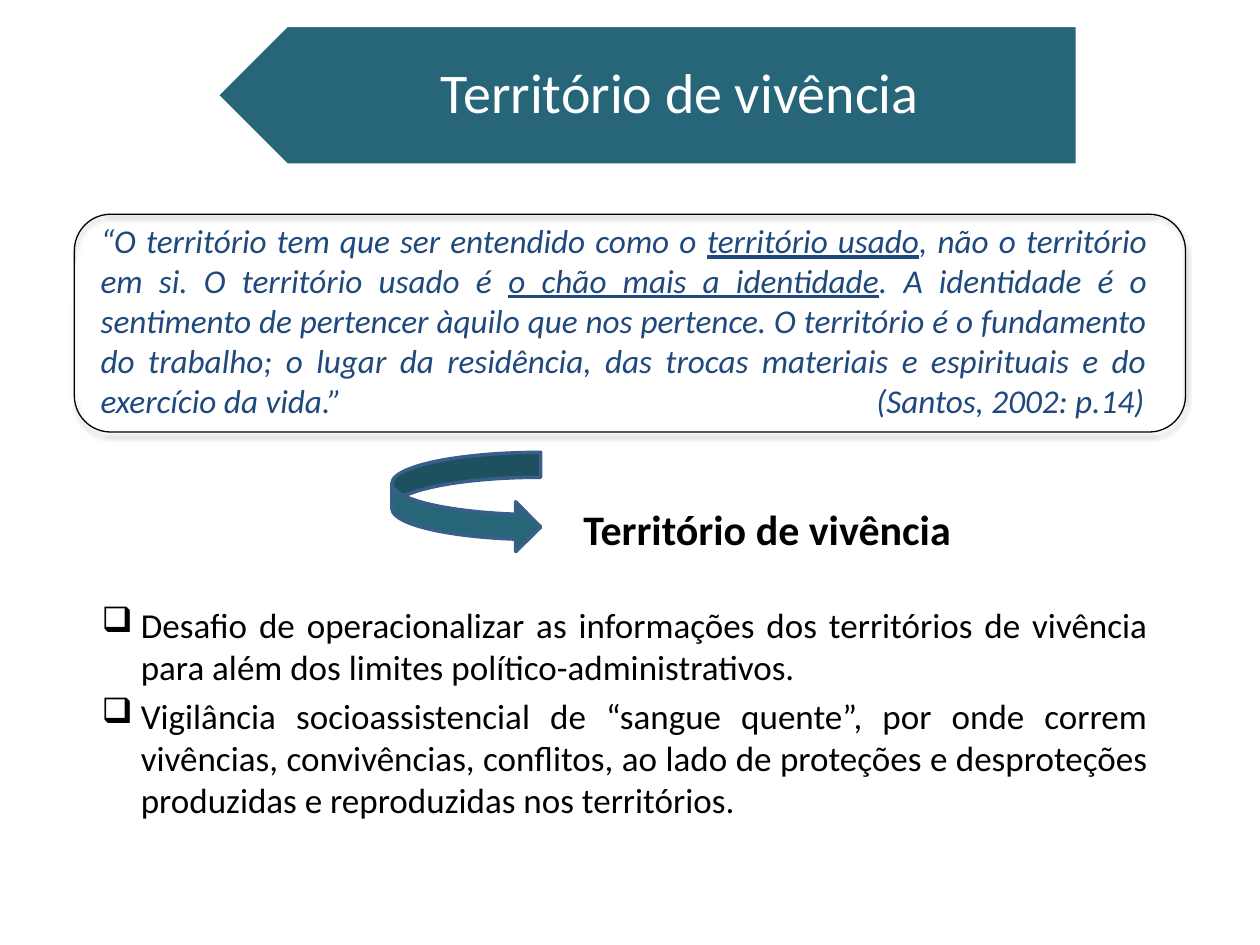
"""Builds the slide on the lived territory, "Território de vivência"."""
from lxml.etree import SubElement
from pptx import Presentation
from pptx.dml.color import RGBColor
from pptx.enum.shapes import MSO_SHAPE
from pptx.enum.text import MSO_ANCHOR, MSO_AUTO_SIZE, PP_ALIGN
from pptx.oxml import parse_xml
from pptx.oxml.ns import nsdecls, qn
from pptx.util import Cm, Pt

TEAL, NAVY, BLACK, WHITE = "266678", "1F497D", "000000", "FFFFFF"
COLUMN = Cm(21.59)


def color(code):
    return RGBColor.from_string(code)


def write(paragraph, text, size=20, ink=BLACK, bold=False, italic=False, underline=False):
    run = paragraph.add_run()
    run.text = text
    font = run.font
    font.name, font.size, font.color.rgb = "Calibri", Pt(size), color(ink)
    font.bold, font.italic, font.underline = bold, italic, underline


deck = Presentation()
deck.slide_width, deck.slide_height = Cm(25.4), Cm(19.05)
slide = deck.slides.add_slide(deck.slide_layouts[5])
shapes = slide.shapes

banner = shapes.add_shape(MSO_SHAPE.PENTAGON, Cm(4.37), Cm(0.51), Cm(17.35), Cm(2.82))
turn = shapes.add_shape(MSO_SHAPE.CURVED_RIGHT_ARROW, Cm(7.9), Cm(9.12), Cm(3), Cm(2.01))
for arrow, edge in ((banner, WHITE), (turn, "395E89")):
    arrow.shadow.inherit = False
    arrow.fill.solid()
    arrow.fill.fore_color.rgb = color(TEAL)
    arrow.line.color.rgb = color(edge)
    arrow.line.width = Pt(2)
banner.rotation = 180

title = shapes.title
title.element.addprevious(banner.element)
title.left, title.top, title.width, title.height = Cm(5.08), Cm(0.51), Cm(16.66), Cm(2.82)
heading = title.text_frame
heading.auto_size = MSO_AUTO_SIZE.NONE
heading.vertical_anchor = MSO_ANCHOR.MIDDLE
heading.margin_left, heading.margin_right = Cm(1.24), Cm(0.64)
heading.margin_top = heading.margin_bottom = Cm(0.33)
heading.paragraphs[0].alignment = PP_ALIGN.CENTER
heading.paragraphs[0].line_spacing = 0.9
write(heading.paragraphs[0], "Território de vivência", size=32, ink=WHITE)

quote_frame = shapes.add_shape(MSO_SHAPE.ROUNDED_RECTANGLE, Cm(1.5), Cm(4.32), Cm(22.4), Cm(4.39))
quote_frame.fill.background()
quote_frame.line.color.rgb = color(BLACK)
quote_frame.line.width = Pt(0.75)
quote_frame.element.spPr.append(parse_xml(
    f'<a:effectLst {nsdecls("a")}><a:outerShdw blurRad="{Pt(3.1)}" dist="{Pt(1.8)}" dir="5400000" '
    'rotWithShape="0"><a:srgbClr val="000000"><a:alpha val="35000"/></a:srgbClr>'
    '</a:outerShdw></a:effectLst>'))

quote_box = shapes.add_textbox(Cm(1.78), Cm(4.32), COLUMN, Cm(4.3))
quote_box.text_frame.word_wrap = True
quote = quote_box.text_frame.paragraphs[0]
quote.alignment = PP_ALIGN.JUSTIFY
tabs = SubElement(quote._p.get_or_add_pPr(), qn("a:tabLst"))
SubElement(tabs, qn("a:tab"), pos=str(Cm(21.04)), algn="r")
for passage, underline in (
    ("“O território tem que ser entendido como o ", False),
    ("território usado", True),
    (", não o território em si. O território usado é ", False),
    ("o chão mais a identidade", True),
    (". A identidade é o sentimento de pertencer àquilo que nos pertence. O território é o "
     "fundamento do trabalho; o lugar da residência, das trocas materiais e espirituais e do "
     "exercício da vida.”\t(Santos, 2002: p.14)", False),
):
    write(quote, passage, size=19, ink=NAVY, italic=True, underline=underline)

concept = shapes.add_textbox(Cm(11.51), Cm(10.03), Cm(11.2), Cm(1.27))
concept.text_frame.word_wrap = True
write(concept.text_frame.paragraphs[0], "Território de vivência", size=24, bold=True)

challenges = shapes.add_textbox(Cm(1.8), Cm(12.04), COLUMN, Cm(5)).text_frame
challenges.word_wrap = True
for index, challenge in enumerate((
    "Desafio de operacionalizar as informações dos territórios de vivência para além dos "
    "limites político-administrativos.",
    "Vigilância socioassistencial de “sangue quente”, por onde correm vivências, convivências, "
    "conflitos, ao lado de proteções e desproteções produzidas e reproduzidas nos territórios.",
)):
    item = challenges.add_paragraph() if index else challenges.paragraphs[0]
    item.alignment = PP_ALIGN.JUSTIFY
    item.space_before = Pt(4 * index)
    properties = item._p.get_or_add_pPr()
    properties.set("marL", str(Cm(0.79)))
    properties.set("indent", str(-Cm(0.79)))
    SubElement(SubElement(properties, qn("a:buClr")), qn("a:srgbClr"), val=BLACK)
    SubElement(properties, qn("a:buChar"), char="❑")
    write(item, challenge)

deck.save("out.pptx")
